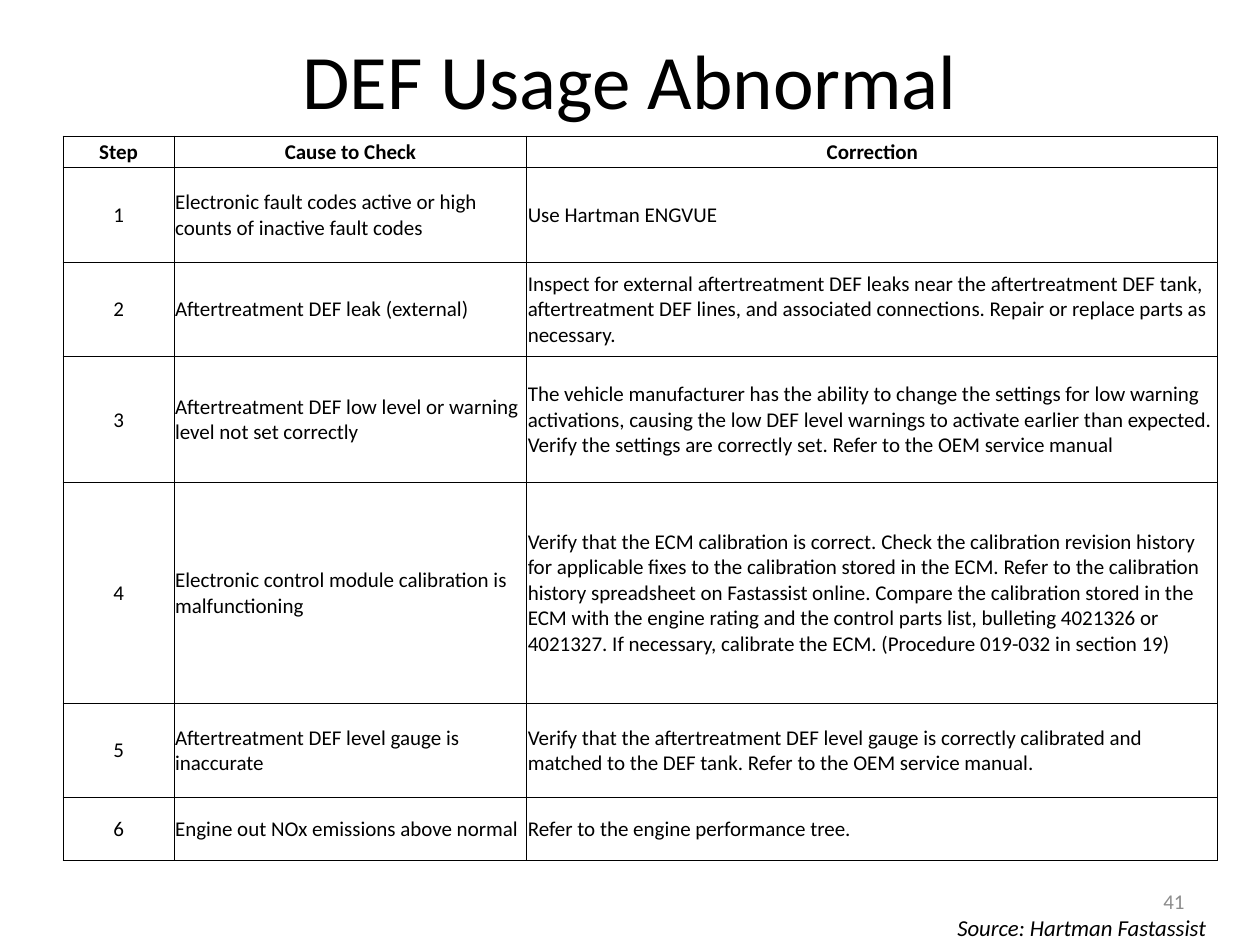
from lxml import etree
from pptx import Presentation
from pptx import util as u
from pptx.dml.color import RGBColor
from pptx.enum import text
from pptx.oxml.ns import qn

COLORS = {"ink": "000000", "paper": "FFFFFF", "page_number": "8C8C8C"}
CENTER, LEFT, RIGHT = text.PP_ALIGN.CENTER, text.PP_ALIGN.LEFT, text.PP_ALIGN.RIGHT

# Row height in quarter inches, then the texts of the three columns
ROWS = [
    (1, "Step", "Cause to Check", "Correction"),
    (3, "1", "Electronic fault codes active or high counts of inactive fault codes",
     "Use Hartman ENGVUE"),
    (3, "2", "Aftertreatment DEF leak (external)",
     "Inspect for external aftertreatment DEF leaks near the aftertreatment DEF tank, "
     "aftertreatment DEF lines, and associated connections. Repair or replace parts as "
     "necessary."),
    (4, "3", "Aftertreatment DEF low level or warning level not set correctly",
     "The vehicle manufacturer has the ability to change the settings for low warning "
     "activations, causing the low DEF level warnings to activate earlier than expected. "
     "Verify the settings are correctly set. Refer to the OEM service manual"),
    (7, "4", "Electronic control module calibration is malfunctioning",
     "Verify that the ECM calibration is correct. Check the calibration revision history "
     "for applicable fixes to the calibration stored in the ECM. Refer to the calibration "
     "history spreadsheet on Fastassist online. Compare the calibration stored in the ECM "
     "with the engine rating and the control parts list, bulleting 4021326 or 4021327. "
     "If necessary, calibrate the ECM. (Procedure 019-032 in section 19)"),
    (3, "5", "Aftertreatment DEF level gauge is inaccurate",
     "Verify that the aftertreatment DEF level gauge is correctly calibrated and matched "
     "to the DEF tank. Refer to the OEM service manual."),
    (2, "6", "Engine out NOx emissions above normal", "Refer to the engine performance tree."),
]
COLUMN_WIDTHS = [2.24, 7.11, 13.93]


def write(frame, words, size, align=LEFT, color="ink", bold=False, italic=False):
    """Put one formatted run in the first paragraph of a text frame."""
    para = frame.paragraphs[0]
    para.alignment = align
    span = para.add_run()
    span.text = words
    span.font.name = "Calibri"
    span.font.size = u.Pt(size)
    span.font.bold = bold
    span.font.italic = italic
    span.font.color.rgb = RGBColor.from_string(COLORS[color])


def add_borders(cell):
    """Draw a half-point line on all four sides of a cell."""
    properties = cell._tc.get_or_add_tcPr()
    for position, side in enumerate(("a:lnL", "a:lnR", "a:lnT", "a:lnB")):
        line = etree.Element(qn(side), w=str(u.Pt(0.5)))
        fill = etree.SubElement(line, qn("a:solidFill"))
        etree.SubElement(fill, qn("a:srgbClr"), val=COLORS["ink"])
        properties.insert(position, line)


deck = Presentation()
deck.slide_width, deck.slide_height = u.Cm(25.4), u.Cm(19.05)
page = deck.slides.add_slide(deck.slide_layouts[5])
page.background.fill.solid()
page.background.fill.fore_color.rgb = RGBColor.from_string(COLORS["paper"])

title = page.shapes.title
title.left, title.top, title.width, title.height = u.Cm(1.27), u.Cm(0), u.Cm(22.86), u.Cm(3.18)
title.text_frame.vertical_anchor = text.MSO_ANCHOR.MIDDLE
write(title.text_frame, "DEF Usage Abnormal", 44, CENTER)

source = page.shapes.add_textbox(u.Cm(19.05), u.Cm(18.29), u.Cm(6.35), u.Cm(0.81))
source.text_frame.word_wrap = True
write(source.text_frame, "Source: Hartman Fastassist", 13, italic=True)

table = page.shapes.add_table(len(ROWS), len(COLUMN_WIDTHS), u.Cm(1.27), u.Cm(2.74),
                              u.Cm(sum(COLUMN_WIDTHS)), u.Cm(14.6)).table
for column, width in zip(table.columns, COLUMN_WIDTHS):
    column.width = u.Cm(width)
for row_index, (quarters, *words) in enumerate(ROWS):
    table.rows[row_index].height = u.Cm(2.54 * quarters / 4)
    is_header = row_index == 0
    for column_index, entry in enumerate(words):
        cell = table.cell(row_index, column_index)
        cell.fill.background()
        cell.vertical_anchor = text.MSO_ANCHOR.MIDDLE
        cell.margin_left = cell.margin_right = cell.margin_top = u.Cm(0.02)
        cell.margin_bottom = u.Cm(0)
        align = CENTER if is_header or column_index == 0 else LEFT
        write(cell.text_frame, entry, 12, align, bold=is_header)
        add_borders(cell)

number = page.shapes.add_textbox(u.Cm(18.2), u.Cm(17.66), u.Cm(5.93), u.Cm(1.01))
number.text_frame.word_wrap = True
number.text_frame.vertical_anchor = text.MSO_ANCHOR.MIDDLE
write(number.text_frame, "41", 12, RIGHT, "page_number")

deck.save("out.pptx")
